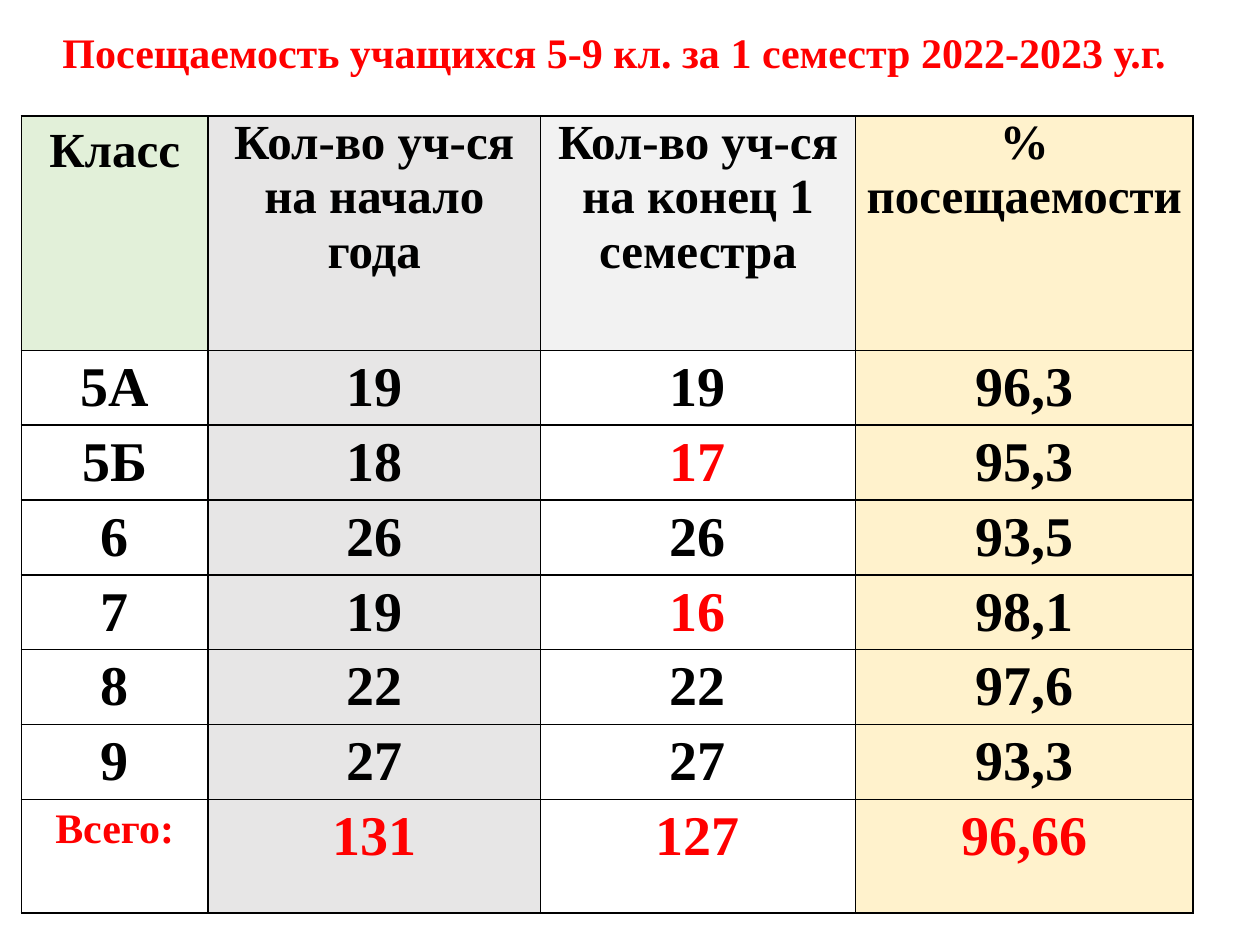
from lxml import etree
from pptx import Presentation
from pptx.dml.color import RGBColor
from pptx.enum.text import MSO_ANCHOR, PP_ALIGN
from pptx.oxml.ns import qn
from pptx.util import Inches, Pt

CENTER = PP_ALIGN.CENTER
TOP = MSO_ANCHOR.TOP
BLACK, RED, WHITE = "000000", "FF0000", "FFFFFF"
TITLE = "Посещаемость учащихся 5-9 кл. за 1 семестр 2022-2023 у.г."
HEADS = ["Класс", "Кол-во уч-ся на начало года",
         "Кол-во уч-ся на конец 1 семестра", "% посещаемости"]
ROWS = [
    ("5А", "19", "19", "96,3"),
    ("5Б", "18", "17", "95,3"),
    ("6", "26", "26", "93,5"),
    ("7", "19", "16", "98,1"),
    ("8", "22", "22", "97,6"),
    ("9", "27", "27", "93,3"),
]
TOTAL = ("Всего:", "131", "127", "96,66")
WIDTHS = [1.48, 2.64, 2.5, 2.68]
HEIGHTS = [1.86] + [0.59] * len(ROWS) + [0.9]
HEAD_FILLS = ["E2F0D9", "E7E6E6", "F2F2F2", "FFF2CC"]
FILLS = [WHITE, "E7E6E6", None, "FFF2CC"]


def color(code):
    """Return the colour for a hex string."""
    return RGBColor.from_string(code)


def write(frame, text, size=32, ink=BLACK, after=0, line=1.0):
    """Write one bold centred paragraph into a text frame."""
    para = frame.paragraphs[0]
    para.alignment = CENTER
    para.space_before, para.space_after = Pt(0), Pt(after)
    para.line_spacing = line
    run = para.add_run()
    run.text = text
    font = run.font
    font.name, font.size, font.bold = "Times New Roman", Pt(size), True
    font.color.rgb = color(ink)


def paint(cell, fill):
    """Give a cell thin black borders and its fill."""
    props = cell._tc.get_or_add_tcPr()
    for side in ("a:lnL", "a:lnR", "a:lnT", "a:lnB"):
        edge = etree.SubElement(props, qn(side), w=str(Pt(1)))
        solid = etree.SubElement(edge, qn("a:solidFill"))
        etree.SubElement(solid, qn("a:srgbClr"), val=BLACK)
    if fill:
        cell.fill.solid()
        cell.fill.fore_color.rgb = color(fill)
    else:
        cell.fill.background()


def add_title(slide):
    """Place and fill the title."""
    title = slide.shapes.title
    title.left, title.top = Inches(0.25), Inches(0.16)
    title.width, title.height = Inches(9.25), Inches(0.51)
    title.text_frame.vertical_anchor = TOP
    write(title.text_frame, TITLE, size=24, ink=RED)


def fill_head(table):
    """Fill the heading row."""
    for col, (text, fill) in enumerate(zip(HEADS, HEAD_FILLS)):
        cell = table.cell(0, col)
        cell.margin_left = cell.margin_right = Inches(0.06)
        cell.margin_top = cell.margin_bottom = 0
        paint(cell, fill)
        write(cell.text_frame, text, size=28, after=10,
              line=1.0 if col else 1.15)


def fill_body(table):
    """Fill class rows and the total, with losses and totals in red."""
    for row, texts in enumerate(ROWS + [TOTAL], 1):
        total = texts is TOTAL
        for col, (text, fill) in enumerate(zip(texts, FILLS)):
            cell = table.cell(row, col)
            paint(cell, fill)
            loss = col == 2 and text != texts[1]
            write(cell.text_frame, text, size=24 if total and not col else 32,
                  ink=RED if total or loss else BLACK)


def add_grid(slide):
    """Add the attendance table."""
    frame = slide.shapes.add_table(
        len(HEIGHTS), len(WIDTHS), Inches(0.17), Inches(0.92),
        Inches(sum(WIDTHS)), Inches(sum(HEIGHTS)))
    table = frame.table
    table.horz_banding = False
    for col, width in zip(table.columns, WIDTHS):
        col.width = Inches(width)
    for row, height in zip(table.rows, HEIGHTS):
        row.height = Inches(height)
    fill_head(table)
    fill_body(table)


def main():
    """Build and save the slide."""
    deck = Presentation()
    deck.slide_width, deck.slide_height = Inches(10), Inches(7.5)
    slide = deck.slides.add_slide(deck.slide_layouts[5])
    add_title(slide)
    add_grid(slide)
    deck.save("out.pptx")


if __name__ == "__main__":
    main()
